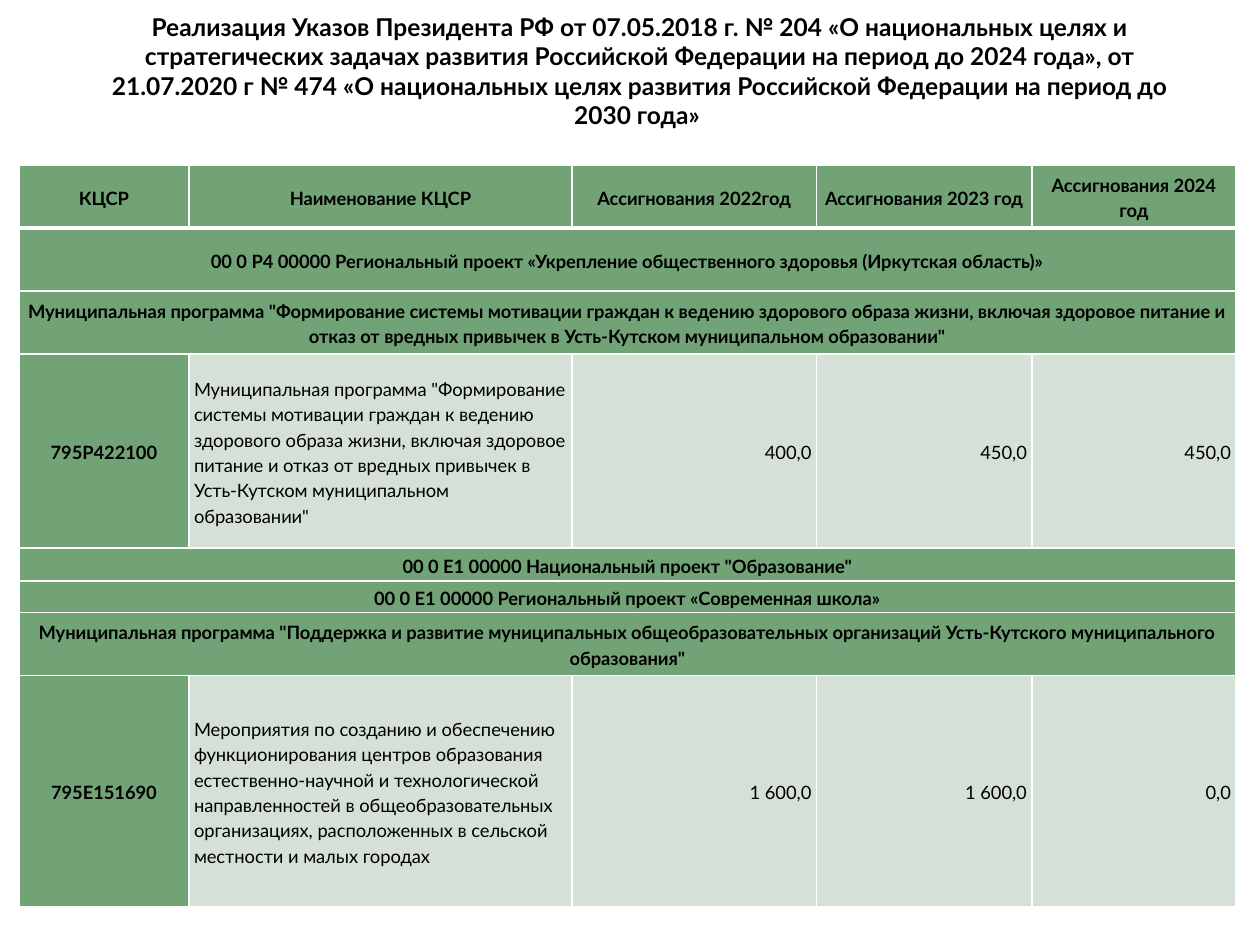
"""Builds a slide with a budget table of regional and national projects."""
from lxml import etree
from pptx import Presentation
from pptx.dml.color import RGBColor
from pptx.enum.text import MSO_ANCHOR, PP_ALIGN
from pptx.oxml.ns import qn
from pptx.util import Inches, Pt

LEFT, CENTER, RIGHT = PP_ALIGN.LEFT, PP_ALIGN.CENTER, PP_ALIGN.RIGHT
MIDDLE = MSO_ANCHOR.MIDDLE
BLACK = RGBColor(0x00, 0x00, 0x00)
WHITE = RGBColor(0xFF, 0xFF, 0xFF)
GREEN = RGBColor(0x72, 0xA3, 0x76)
PALE = RGBColor(0xD5, 0xE0, 0xD6)
FONT = "Lato"

TITLE = (
    "Реализация Указов Президента РФ от 07.05.2018 г. № 204 «О национальных целях и "
    "стратегических задачах развития Российской Федерации на период до 2024 года», "
    "от 21.07.2020 г № 474 «О национальных целях развития Российской Федерации "
    "на период до 2030 года» "
)
HEALTH = (
    'Муниципальная программа "Формирование системы мотивации граждан к ведению '
    "здорового образа жизни, включая здоровое питание и отказ от вредных привычек "
    'в Усть-Кутском муниципальном образовании"'
)
SCHOOLS = (
    'Муниципальная программа "Поддержка и развитие муниципальных общеобразовательных '
    'организаций Усть-Кутского муниципального образования"'
)
CENTRES = (
    "Мероприятия по созданию и обеспечению функционирования центров образования "
    "естественно-научной и технологической направленностей в общеобразовательных "
    "организациях, расположенных в сельской местности и малых городах"
)
COLS = [1.35, 3.04, 1.94, 1.71, 1.62]
ROWS = [
    (0.5, ["КЦСР", "Наименование КЦСР", "Ассигнования 2022год",
           "Ассигнования 2023 год", "Ассигнования 2024 год"]),
    (0.5, ["00 0 P4 00000 Региональный проект «Укрепление общественного здоровья "
           "(Иркутская область)»"]),
    (0.5, [HEALTH]),
    (1.54, ["795P422100", HEALTH, "400,0", "450,0", "450,0"]),
    (0.26, ['00 0 E1 00000 Национальный проект "Образование"']),
    (0.25, ["00 0 E1 00000 Региональный проект «Современная школа»"]),
    (0.5, [SCHOOLS]),
    (1.84, ["795E151690", CENTRES, "1 600,0", "1 600,0", "0,0"]),
]


def write(tf, text, size, bold=True, align=CENTER, spacing=None):
    """Put one formatted paragraph into a text frame."""
    p = tf.paragraphs[0]
    p.alignment = align
    if spacing:
        p.line_spacing = spacing
    r = p.add_run()
    r.text = text
    r.font.name = FONT
    r.font.size = Pt(size)
    r.font.bold = bold
    r.font.color.rgb = BLACK


def set_borders(cell, bottom):
    """Give a cell white borders, with its own bottom width in points."""
    tcPr = cell._tc.get_or_add_tcPr()
    for i, (side, width) in enumerate(zip("LRTB", (1, 1, 1, bottom))):
        ln = etree.Element(qn(f"a:ln{side}"), w=str(Pt(width)))
        fill = etree.SubElement(ln, qn("a:solidFill"))
        etree.SubElement(fill, qn("a:srgbClr"), val=str(WHITE))
        tcPr.insert(i, ln)


def add_title(s):
    """Place the heading in the title placeholder."""
    sp = s.shapes.title
    sp.left, sp.top, sp.width, sp.height = map(Inches, (0.59, 0.05, 8.98, 1.02))
    tf = sp.text_frame
    tf.word_wrap = True
    tf.vertical_anchor = MIDDLE
    write(tf, TITLE, 14)


def add_budget_table(s):
    """Place the table; a row with a single text spans all columns."""
    height = sum(h for h, _ in ROWS)
    frame = s.shapes.add_table(len(ROWS), len(COLS), Inches(0.15), Inches(1.31),
                               Inches(sum(COLS)), Inches(height))
    table = frame.table
    for column, width in zip(table.columns, COLS):
        column.width = Inches(width)
    for i, (row_height, texts) in enumerate(ROWS):
        table.rows[i].height = Inches(row_height)
        if len(texts) == 1:
            table.cell(i, 0).merge(table.cell(i, len(COLS) - 1))
        for j in range(len(COLS)):
            cell = table.cell(i, j)
            label = i == 0 or j == 0 or len(texts) == 1
            cell.fill.solid()
            cell.fill.fore_color.rgb = GREEN if label else PALE
            set_borders(cell, 3 if i == 0 else 1)
            cell.margin_left = cell.margin_right = Inches(0.04)
            cell.margin_top = cell.margin_bottom = 0
            cell.vertical_anchor = MIDDLE
            if j < len(texts):
                align = CENTER if label else LEFT if j == 1 else RIGHT
                write(cell.text_frame, texts[j], 10.5, bold=label, align=align,
                      spacing=1.15)


def main():
    prs = Presentation()
    prs.slide_width, prs.slide_height = Inches(10), Inches(7.5)
    s = prs.slides.add_slide(prs.slide_layouts[5])
    add_title(s)
    add_budget_table(s)
    prs.save("out.pptx")


if __name__ == "__main__":
    main()
